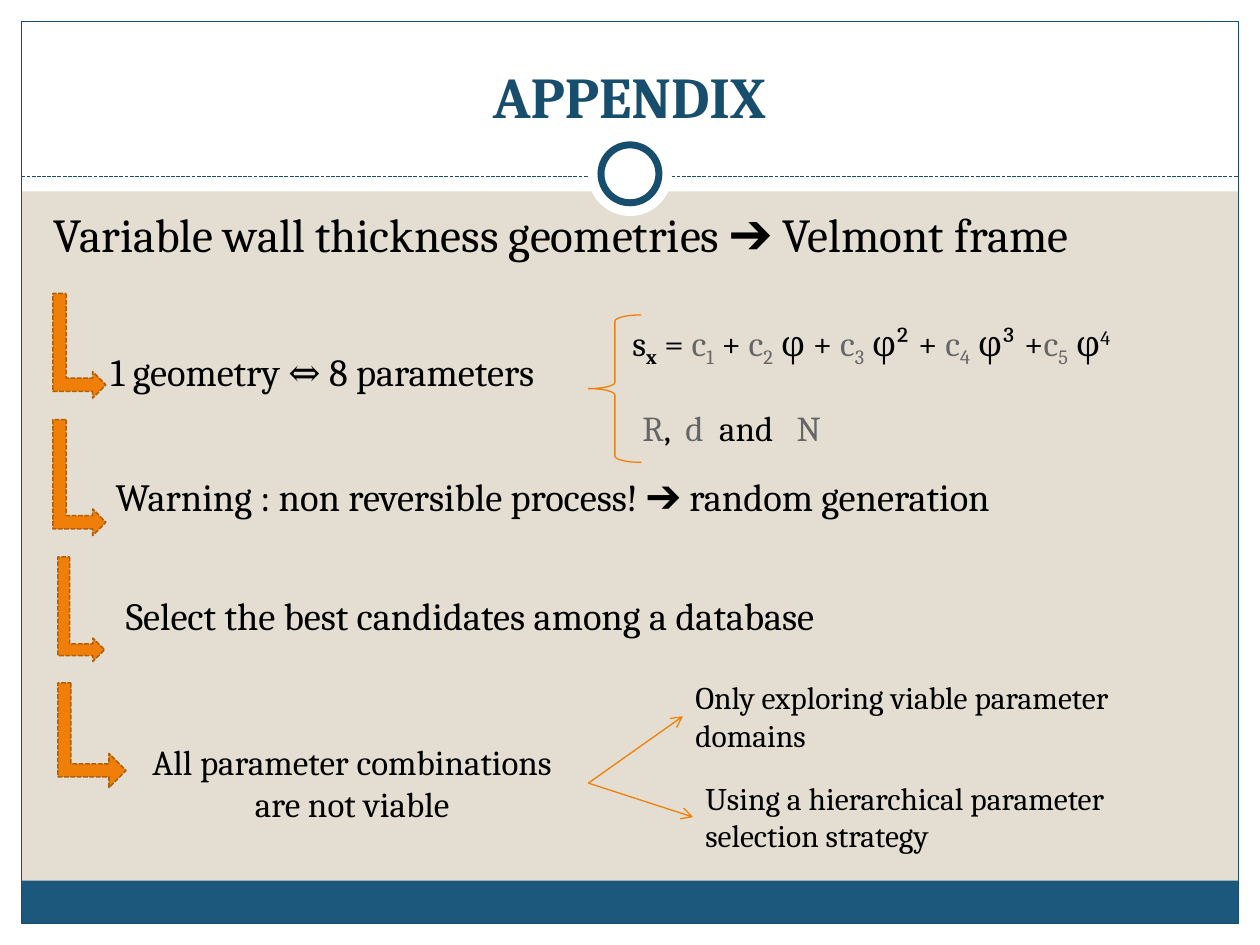
from lxml import etree
from pptx import Presentation
from pptx.dml.color import RGBColor
from pptx.enum.dml import MSO_LINE
from pptx.enum.shapes import MSO_CONNECTOR, MSO_SHAPE
from pptx.enum.text import MSO_ANCHOR, PP_ALIGN
from pptx.oxml.ns import qn
from pptx.util import Inches, Pt

RECTANGLE, ELLIPSE = MSO_SHAPE.RECTANGLE, MSO_SHAPE.OVAL
BENT_ARROW, BRACE = MSO_SHAPE.BENT_UP_ARROW, MSO_SHAPE.LEFT_BRACE
STRAIGHT, DASH = MSO_CONNECTOR.STRAIGHT, MSO_LINE.SQUARE_DOT
CENTER, LEFT, BOTTOM = PP_ALIGN.CENTER, PP_ALIGN.LEFT, MSO_ANCHOR.BOTTOM

FONT = "Cambria"
SAND = RGBColor(0xE3, 0xDE, 0xD1)
WHITE = RGBColor(0xFF, 0xFF, 0xFF)
BLACK = RGBColor(0x00, 0x00, 0x00)
GRAY = RGBColor(0x65, 0x65, 0x65)
NAVY = RGBColor(0x18, 0x4E, 0x6D)
BLUE = RGBColor(0x1B, 0x58, 0x7C)
ORANGE = RGBColor(0xF0, 0x7F, 0x09)
BROWN = RGBColor(0xB2, 0x5E, 0x07)
SUB, SUPER = -25000, 30000
RIGHT_SIDE, LEFT_SIDE = 3, 1


def inches(box):
    return [Inches(value) for value in box]


def add_shape(page, kind, box, fill=None, line=None, width=0.75):
    shape = page.shapes.add_shape(kind, *inches(box))
    shape.shadow.inherit = False
    if fill is None:
        shape.fill.background()
    else:
        shape.fill.solid()
        shape.fill.fore_color.rgb = fill
    if line is None:
        shape.line.fill.background()
    else:
        shape.line.color.rgb = line
        shape.line.width = Pt(width)
    return shape


def add_line(page, start, end, color):
    line = page.shapes.add_connector(STRAIGHT, *inches(start + end))
    line.line.color.rgb = color
    line.line.width = Pt(0.75)
    etree.SubElement(line._element.spPr, qn("a:effectLst"))
    return line


def format_font(font, size, color=BLACK, bold=False):
    font.name, font.size, font.bold = FONT, Pt(size), bold
    font.color.rgb = color


def add_text(page, box, text, size, align=LEFT):
    """Add a wrapping text box holding one paragraph in one style."""
    shape = page.shapes.add_textbox(*inches(box))
    shape.text_frame.word_wrap = True
    para = shape.text_frame.paragraphs[0]
    para.text = text
    para.alignment = align
    for span in para.runs:
        format_font(span.font, size)
    return shape


def add_formula(page, box, pieces):
    """Add a line of (text, colour, baseline shift, bold) pieces."""
    para = add_text(page, box, "", 20).text_frame.paragraphs[0]
    for text, color, shift, bold in pieces:
        span = para.add_run()
        span.text = text
        format_font(span.font, 20, color, bold)
        if shift:
            span._r.get_or_add_rPr().set("baseline", str(shift))


def draw_frame(page, box):
    """Draw the white margins, header, footer band, border and ring."""
    left, top, width, height = box
    margin, header, band = 0.17, 1.52, 0.34
    right, bottom = left + width - margin, top + height - margin
    inner_width = width - 2 * margin
    for strip in ((left, bottom, width, margin), (left, top, width, header),
                  (left, top, margin, height), (right, top, margin, height)):
        add_shape(page, RECTANGLE, strip, WHITE)
    add_shape(page, RECTANGLE, (left + margin, bottom - band, inner_width, band), BLUE)
    add_shape(page, RECTANGLE,
              (left + margin, top + margin, inner_width, height - 2 * margin), line=NAVY)
    rule = add_line(page, (left + margin, top + 1.4), (right, top + 1.4), NAVY)
    rule.line.dash_style = DASH
    middle_x, middle_y = left + width / 2, top + 1.38
    for size, line in ((0.67, None), (0.46, NAVY)):
        ring = (middle_x - size / 2, middle_y - size / 2, size, size)
        add_shape(page, ELLIPSE, ring, WHITE, line, 4)


def place_title(page, box, text):
    title = page.shapes.title
    title.left, title.top, title.width, title.height = inches(box)
    frame = title.text_frame
    frame.text = text
    frame.vertical_anchor = BOTTOM
    frame.paragraphs[0].alignment = CENTER
    format_font(frame.paragraphs[0].runs[0].font, 33, NAVY, True)
    title.element.getparent().append(title.element)  # in front of the header


def draw_steps(page, box):
    heading = "Variable wall thickness geometries ➔ Velmont frame"
    frame = add_text(page, box, heading, 27).text_frame
    steps = (("1 geometry ⇔ 8 parameters", 0.45, 49),
             ("Warning : non reversible process! ➔ random generation", 0.49, 45),
             ("Select the best candidates among a database", 0.57, 42))
    for text, indent, gap in steps:
        para = frame.add_paragraph()
        para.text = text
        para.space_before = Pt(gap)
        para._p.get_or_add_pPr().set("marL", str(Inches(indent)))
        format_font(para.runs[0].font, 22)


def draw_step_arrows(page, boxes):
    """Draw down-then-right arrows; each box is as seen after rotation."""
    for left, top, width, height, stem in boxes:
        turned = (left + (width - height) / 2, top + (height - width) / 2, height, width)
        arrow = add_shape(page, BENT_ARROW, turned, ORANGE, BROWN, 0.9)
        arrow.adjustments[0] = stem
        arrow.line.dash_style = DASH
        arrow.rotation = 90


def draw_parameters(page, box):
    """Draw the brace with the thickness formula and the other parameters."""
    left, top, _, height = box
    brace = add_shape(page, BRACE, (left, top, 0.42, height), line=ORANGE)
    brace.adjustments[0] = 0.119
    thickness = [("s", BLACK, 0, False), ("x", BLACK, SUB, True), (" = ", BLACK, 0, False)]
    joints = (" + ", " φ + ", " φ² + ", " φ³ +", " φ")
    for number, joint in enumerate(joints, 1):
        thickness += [("c", GRAY, 0, False), (str(number), GRAY, SUB, False),
                      (joint, BLACK, 0, False)]
    thickness.append(("4", BLACK, SUPER, False))
    add_formula(page, (left + 0.25, top, 4.58, 0.44), thickness)
    others = (("R", GRAY), (",  ", BLACK), ("d", GRAY), ("  and   ", BLACK), ("N", GRAY))
    add_formula(page, (left + 0.33, top + 0.68, 4.08, 0.44),
                [(text, color, 0, False) for text, color in others])


def draw_strategies(page, box):
    """Draw the viability problem and arrows to its two answers."""
    left, top, _, _ = box
    problem = add_text(page, (left, top + 0.5, 3.75, 0.77),
                       "All parameter combinations are not viable", 20, CENTER)
    answers = (("Only exploring viable parameter domains", 4.5, 0),
               ("Using a hierarchical parameter selection strategy", 4.58, 0.8))
    for text, across, down in answers:
        answer = add_text(page, (left + across, top + down, 3.83, 0.71), text, 18)
        arrow = add_line(page, (0, 0), (1, 1), ORANGE)
        arrow.begin_connect(problem, RIGHT_SIDE)
        arrow.end_connect(answer, LEFT_SIDE)
        etree.SubElement(arrow.line._get_or_add_ln(), qn("a:tailEnd"), type="arrow")


def main():
    deck = Presentation()
    deck.slide_width, deck.slide_height = Inches(10), Inches(7.5)
    page = deck.slides.add_slide(deck.slide_layouts[5])
    page.background.fill.solid()
    page.background.fill.fore_color.rgb = SAND
    draw_frame(page, (0, 0, 10, 7.5))
    place_title(page, (0.33, 0.25, 9.33, 0.83), "APPENDIX")
    draw_steps(page, (0.33, 1.58, 9.5, 5.67))
    draw_parameters(page, (4.67, 2.5, 4.83, 1.17))
    draw_step_arrows(page, ((0.42, 2.33, 0.42, 0.83, 0.25), (0.42, 3.33, 0.42, 0.92, 0.25),
                            (0.46, 4.42, 0.37, 0.83, 0.25), (0.46, 5.42, 0.54, 0.83, 0.19)))
    draw_strategies(page, (0.92, 5.33, 8.41, 1.51))
    deck.save("out.pptx")


if __name__ == "__main__":
    main()
